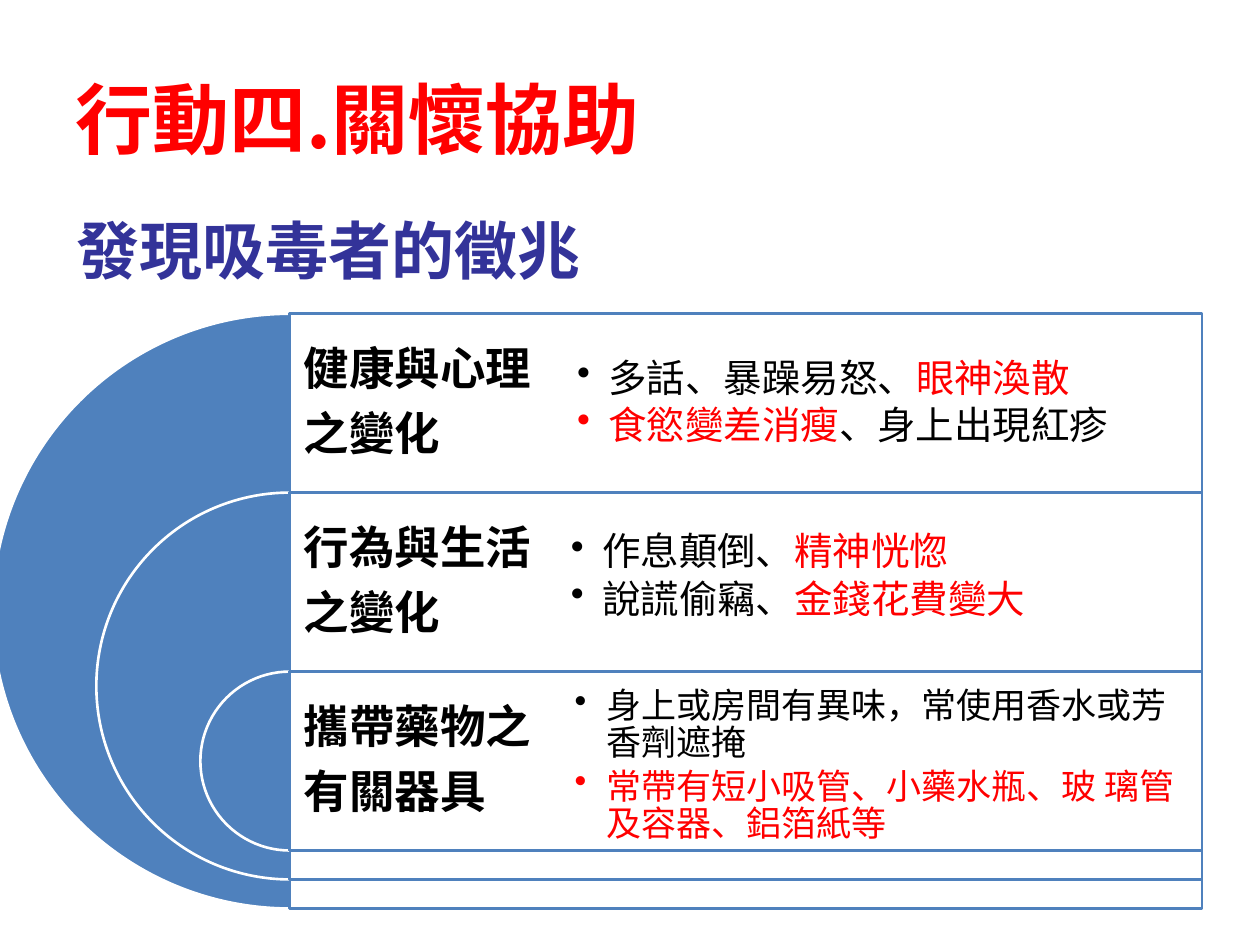
from lxml.etree import SubElement
from pptx import Presentation
from pptx.dml.color import RGBColor
from pptx.enum.shapes import MSO_SHAPE
from pptx.enum.text import MSO_ANCHOR, PP_ALIGN
from pptx.oxml.ns import qn
from pptx.util import Inches, Pt

THEME = {
    "font": "Noto Sans CJK SC",
    "red": "FF0000", "navy": "333399", "black": "000000",
    "blue": "4F81BD", "white": "FFFFFF",
    "title": 44, "subtitle": 36, "heading": 26,
}

# Content: a paragraph is a list of (text, colour) runs
TITLE = "行動四.關懷協助"
SUBTITLE = "發現吸毒者的徵兆"
SIGNS = [
    {"heading": ["健康與心理", "之變化"], "size": 22, "box": (4.31, 2.49, 6.85),
     "points": [[("多話、暴躁易怒、", "black"), ("眼神渙散", "red")],
                [("食慾變差消瘦", "red"), ("、身上出現紅疹", "black")]]},
    {"heading": ["行為與生活", "之變化"], "size": 22, "box": (4.26, 3.87, 5.29),
     "points": [[("作息顛倒、", "black"), ("精神恍惚", "red")],
                [("說謊偷竊、", "black"), ("金錢花費變大", "red")]]},
    {"heading": ["攜帶藥物之", "有關器具"], "size": 20, "box": (4.29, 5.37, 5.35),
     "points": [[("身上或房間有異味，常使用香水或芳香劑遮掩", "black")],
                [("常帶有短小吸管、小藥水瓶、玻 璃管及容器、鋁箔紙等", "red")]]},
]

# Nested half discs share one centre line; each is one step smaller
CENTRE_X, TOP, ROW = 2.3, 2.49, 1.42
OUTER, STEP = 4.72, 1.65
PANEL_WIDTH, HEADING_WIDTH = 7.24, 3.62


def colour(name):
    return RGBColor.from_string(THEME[name])


def write(frame, paragraphs, size, bold=False, spacing=None, after=0,
          inset=None, anchor=MSO_ANCHOR.TOP, bullet=False):
    frame.word_wrap = True
    frame.vertical_anchor = anchor
    if inset is not None:
        frame.margin_left = frame.margin_right = Inches(inset)
        frame.margin_top = frame.margin_bottom = Inches(inset)
    for index, runs in enumerate(paragraphs):
        paragraph = frame.add_paragraph() if index else frame.paragraphs[0]
        paragraph.alignment = PP_ALIGN.LEFT
        paragraph.space_before = Pt(0)
        paragraph.space_after = Pt(after)
        if spacing:
            paragraph.line_spacing = spacing
        if bullet:
            properties = paragraph._p.get_or_add_pPr()
            properties.set("marL", str(Inches(0.25)))
            properties.set("indent", str(-Inches(0.25)))
            SubElement(properties, qn("a:buChar")).set("char", "•")
        for text, tint in runs:
            run = paragraph.add_run()
            run.text = text
            font = run.font
            font.size, font.bold, font.name = Pt(size), bold, THEME["font"]
            font.color.rgb = colour(tint)
            SubElement(font._element, qn("a:ea")).set("typeface", THEME["font"])


def add_text(slide, box, paragraphs, size, **style):
    holder = slide.shapes.add_textbox(*map(Inches, box))
    write(holder.text_frame, paragraphs, size, **style)


def add_outline(slide, preset, box, fill, line):
    shape = slide.shapes.add_shape(preset, *map(Inches, box))
    shape.shadow.inherit = False
    shape.fill.solid()
    shape.fill.fore_color.rgb = colour(fill)
    shape.line.color.rgb = colour(line)
    shape.line.width = Pt(1.5)
    return shape


def build():
    deck = Presentation()
    deck.slide_width, deck.slide_height = Inches(10), Inches(7.5)
    slide = deck.slides.add_slide(deck.slide_layouts[5])

    # Title and subtitle
    title = slide.shapes.title
    title.left, title.top, title.width, title.height = map(Inches, (0.5, 0.52, 9, 1.03))
    write(title.text_frame, [[(TITLE, "red")]], THEME["title"], bold=True)
    add_text(slide, (0.51, 1.7, 9, 0.75), [[(SUBTITLE, "navy")]],
             THEME["subtitle"], bold=True, spacing=0.9)

    # Half discs, panels and headings
    for row, sign in enumerate(SIGNS):
        top, size = TOP + row * ROW, OUTER - row * STEP
        disc = add_outline(slide, MSO_SHAPE.PIE,
                           (CENTRE_X - size / 2, top, size, size), "blue", "white")
        disc.adjustments[0], disc.adjustments[1] = 54, 162
        panel = add_outline(slide, MSO_SHAPE.RECTANGLE,
                            (CENTRE_X, top, PANEL_WIDTH, size), "white", "blue")
        tint = panel.fill._xPr.find(qn("a:solidFill"))[0]
        SubElement(tint, qn("a:alpha")).set("val", "90000")
        add_text(slide, (CENTRE_X, top, HEADING_WIDTH, ROW),
                 [[(line, "black")] for line in sign["heading"]], THEME["heading"],
                 bold=True, spacing=0.9, after=9.1, inset=0.11,
                 anchor=MSO_ANCHOR.MIDDLE)

    # Bulleted signs
    for sign in SIGNS:
        add_text(slide, (*sign["box"], ROW), sign["points"], sign["size"],
                 spacing=0.9, after=sign["size"] * 0.15, inset=0.27,
                 anchor=MSO_ANCHOR.MIDDLE, bullet=True)

    deck.save("out.pptx")


if __name__ == "__main__":
    build()
